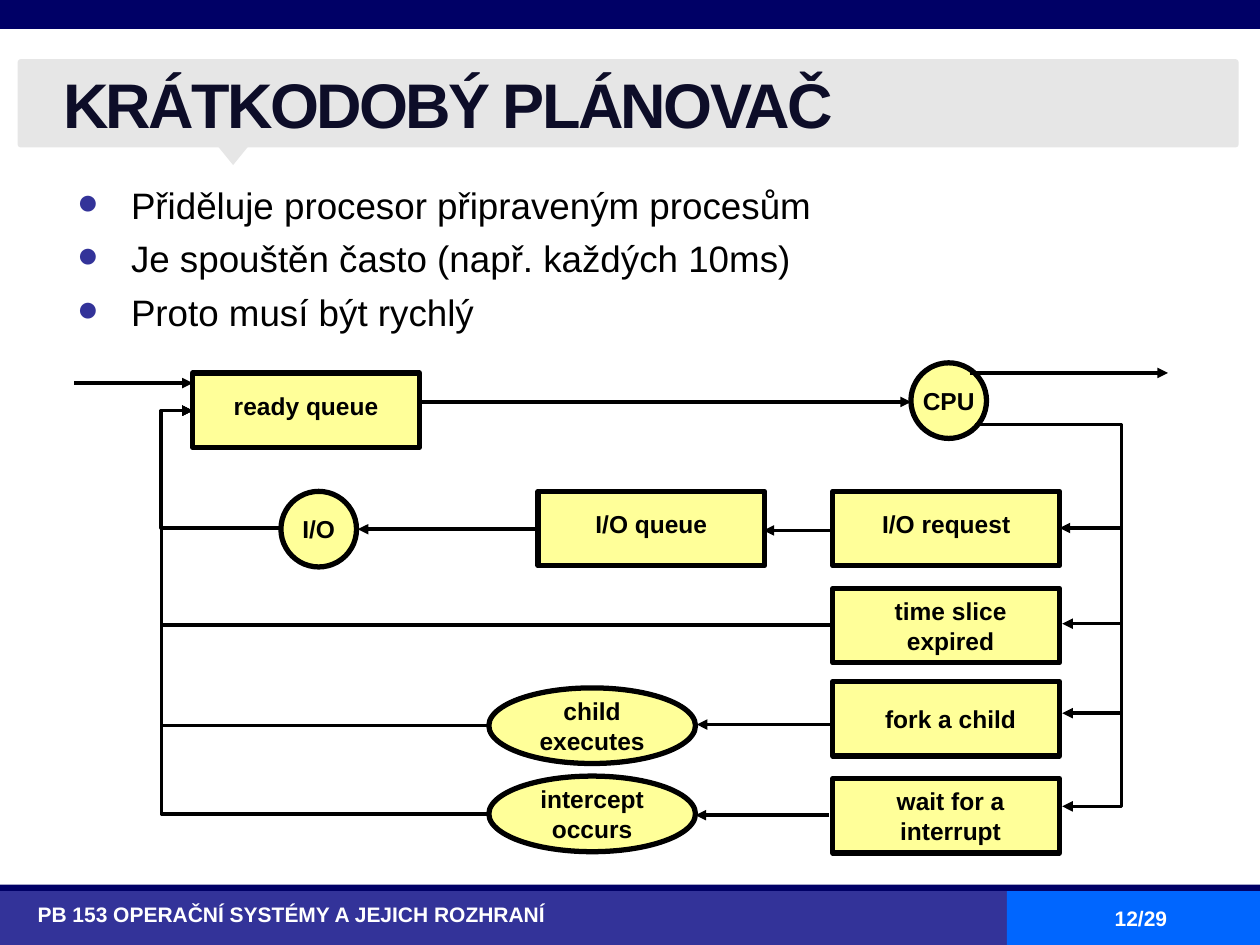
from lxml import etree
from pptx import Presentation
from pptx import util as u
from pptx.dml.color import RGBColor
from pptx.enum import shapes, text
from pptx.oxml.ns import qn

COLORS = {
    "navy": "000066", "indigo": "333399", "blue": "0066FF", "plate": "E6E6E6",
    "heading": "0D0D28", "ink": "000000", "node": "FFFF99", "white": "FFFFFF",
}
FONT = "Arial"
UNIT = u.Inches(0.1)
COLUMNS, ROWS = 100, 75

RECT = shapes.MSO_SHAPE.RECTANGLE
OVAL = shapes.MSO_SHAPE.OVAL
LEFT, CENTER = text.PP_ALIGN.LEFT, text.PP_ALIGN.CENTER

BOX_W, BOX_H, CIRCLE = 18, 5.9, 6
OVAL_W, OVAL_X = 16.4, 38.8
TASK_X = 66.1
FEEDBACK_X, DISPATCH_X = 12.8, 89
READY_IN = (15.3, 32.6)
CPU_OUT = (77.4, 33.7)

NO_MARGIN = {"margin_left": 0, "margin_right": 0, "margin_top": 0, "margin_bottom": 0}
RAISED = {**NO_MARGIN, "margin_bottom": u.Inches(0.07)}
INDENTED = {**NO_MARGIN, "margin_left": u.Inches(0.33), "margin_right": u.Inches(0.26)}
UNWRAPPED = {**NO_MARGIN, "word_wrap": False}

BULLETS = [
    "Přiděluje procesor připraveným procesům",
    "Je spouštěn často (např. každých 10ms)",
    "Proto musí být rychlý",
]
NODES = [
    (RECT, 15.3, 29.6, BOX_W, BOX_H, "ready queue", RAISED),
    (RECT, 42.7, 39, BOX_W, BOX_H, "I/O queue", RAISED),
    (RECT, TASK_X, 39, BOX_W, BOX_H, "I/O request", RAISED),
    (RECT, TASK_X, 46.7, BOX_W, BOX_H, "time slice expired", INDENTED),
    (RECT, TASK_X, 54.1, BOX_W, BOX_H, "fork a child", INDENTED),
    (RECT, TASK_X, 61.8, BOX_W, BOX_H, "wait for a interrupt", INDENTED),
    (OVAL, OVAL_X, 54.6, OVAL_W, CIRCLE, "child executes", NO_MARGIN),
    (OVAL, OVAL_X, 61.6, OVAL_W, CIRCLE, "intercept occurs", NO_MARGIN),
    (OVAL, 22.3, 39, CIRCLE, CIRCLE, "I/O", UNWRAPPED),
    (OVAL, 72.3, 28.8, CIRCLE, CIRCLE, "CPU", UNWRAPPED),
]
STRAIGHT = [
    (66.1, 60.6, 42.1), (5.9, 15.3, 30.4), (33.3, 72.3, 31.9), (77, 92.7, 29.6),
    (42.6, 28.4, 42), (66.1, 55.3, 57.5), (65.8, 55.2, 64.7),
]
DISPATCH_ENDS = [(84.1, 41.9), (84.3, 49.5), (84.3, 56.6), (84.3, 64)]
FEEDBACK_STARTS = [(22.3, 41.9), (66.1, 49.6), (38.8, 57.6), (38.8, 64.6)]


def color(name):
    return RGBColor.from_string(COLORS[name])


def grid(*cells):
    return [round(cell * UNIT) for cell in cells]


def apply(target, formats):
    for name, value in formats.items():
        setattr(target, name, value)


def place(shape, *cells):
    apply(shape, dict(zip(("left", "top", "width", "height"), grid(*cells))))


def write(paragraph, words, tint, size, bold=True, **formats):
    apply(paragraph, formats)
    run = paragraph.add_run()
    run.text = words
    apply(run.font, {"name": FONT, "size": u.Pt(size), "bold": bold})
    run.font.color.rgb = color(tint)
    return run


def add_panel(slide, kind, tint, *cells):
    panel = slide.shapes.add_shape(kind, *grid(*cells))
    panel.shadow.inherit = False
    panel.fill.solid()
    panel.fill.fore_color.rgb = color(tint)
    panel.line.fill.background()
    return panel


def add_node(slide, kind, x, y, width, height, label, frame):
    node = add_panel(slide, kind, "node", x, y, width, height)
    node.line.color.rgb = color("ink")
    node.line.width = u.Pt(3)
    apply(node.text_frame, {"word_wrap": True, "vertical_anchor": text.MSO_ANCHOR.MIDDLE, **frame})
    write(node.text_frame.paragraphs[0], label, "ink", 14, alignment=CENTER)


def add_arrow(slide, start, end, via_x=None):
    kind = shapes.MSO_CONNECTOR.STRAIGHT if via_x is None else shapes.MSO_CONNECTOR.ELBOW
    arrow = slide.shapes.add_connector(kind, *grid(*start, *end))
    arrow.line.color.rgb = color("ink")
    arrow.line.width = u.Pt(2)
    properties = arrow._element.spPr
    etree.SubElement(properties.find(qn("a:ln")), qn("a:tailEnd"), type="triangle")
    etree.SubElement(properties, qn("a:effectLst"))
    if via_x is not None:
        bend = round((via_x - start[0]) / (end[0] - start[0]) * 100000)
        guides = properties.find(qn("a:prstGeom")).find(qn("a:avLst"))
        etree.SubElement(guides, qn("a:gd"), name="adj1", fmla=f"val {bend}")


def add_caption(slide, words, cells, align, frame):
    caption = slide.shapes.add_textbox(*grid(*cells))
    apply(caption.text_frame, {"word_wrap": True, **frame})
    write(caption.text_frame.paragraphs[0], words, "white", 12, alignment=align)


def add_backdrop(slide):
    add_panel(slide, RECT, "navy", 0, 0, COLUMNS, 2.3)
    add_panel(slide, RECT, "indigo", 0, 70.7, COLUMNS, 4.3)
    add_panel(slide, RECT, "blue", 79.9, 70.7, 20.1, 4.3)
    add_panel(slide, RECT, "navy", 0, 70.2, COLUMNS, 0.5)
    plate = add_panel(slide, shapes.MSO_SHAPE.ROUNDED_RECTANGLE, "plate", 1.4, 4.7, 96.9, 7)
    plate.adjustments[0] = 0.035
    pointer = add_panel(slide, shapes.MSO_SHAPE.ISOSCELES_TRIANGLE, "plate", 17.2, 11.5, 2.6, 1.6)
    pointer.rotation = 180
    add_caption(slide, "12/29", (81.5, 71.9, 18.1, 2), CENTER, NO_MARGIN)
    add_caption(slide, "PB 153 OPERAČNÍ SYSTÉMY A JEJICH ROZHRANÍ", (2, 71.1, 78, 3.6), LEFT, {})


def fill_title(slide):
    title = slide.shapes.title
    slide.shapes._spTree.append(title._element)
    place(title, 5, 3, 93, 10.9)
    apply(title.text_frame, {
        **NO_MARGIN, "word_wrap": True, "auto_size": text.MSO_AUTO_SIZE.NONE,
        "vertical_anchor": text.MSO_ANCHOR.MIDDLE,
    })
    run = write(title.text_frame.paragraphs[0], "KRÁTKODOBÝ PLÁNOVAČ", "heading", 36,
                alignment=LEFT, line_spacing=u.Pt(40))
    run.font._element.set("spc", "-150")


def add_bullet(paragraph):
    properties = paragraph._p.get_or_add_pPr()
    indent = u.Inches(0.43)
    properties.set("marL", str(indent))
    properties.set("indent", str(-indent))
    tint = etree.SubElement(properties, qn("a:buClr"))
    etree.SubElement(tint, qn("a:srgbClr"), val=COLORS["indigo"])
    etree.SubElement(properties, qn("a:buFont"), typeface=FONT)
    etree.SubElement(properties, qn("a:buChar"), char="●")


def fill_body(slide):
    body = slide.placeholders[1]
    slide.shapes._spTree.append(body._element)
    place(body, 5.1, 15.5, 92.1, 11.9)
    frame = body.text_frame
    apply(frame, {"word_wrap": True, "auto_size": text.MSO_AUTO_SIZE.NONE})
    for index, words in enumerate(BULLETS):
        paragraph = frame.add_paragraph() if index else frame.paragraphs[0]
        add_bullet(paragraph)
        write(paragraph, words, "ink", 21, bold=False, alignment=LEFT,
              line_spacing=0.5, space_before=u.Pt(18 if index else 0))


def main():
    deck = Presentation()
    apply(deck, {"slide_width": COLUMNS * UNIT, "slide_height": ROWS * UNIT})
    slide = deck.slides.add_slide(deck.slide_layouts[1])
    add_backdrop(slide)
    fill_body(slide)
    fill_title(slide)
    for node in NODES:
        add_node(slide, *node)
    for start_x, end_x, y in STRAIGHT:
        add_arrow(slide, (start_x, y), (end_x, y))
    for end in DISPATCH_ENDS:
        add_arrow(slide, CPU_OUT, end, DISPATCH_X)
    for start in FEEDBACK_STARTS:
        add_arrow(slide, start, READY_IN, FEEDBACK_X)
    deck.save("out.pptx")


if __name__ == "__main__":
    main()
